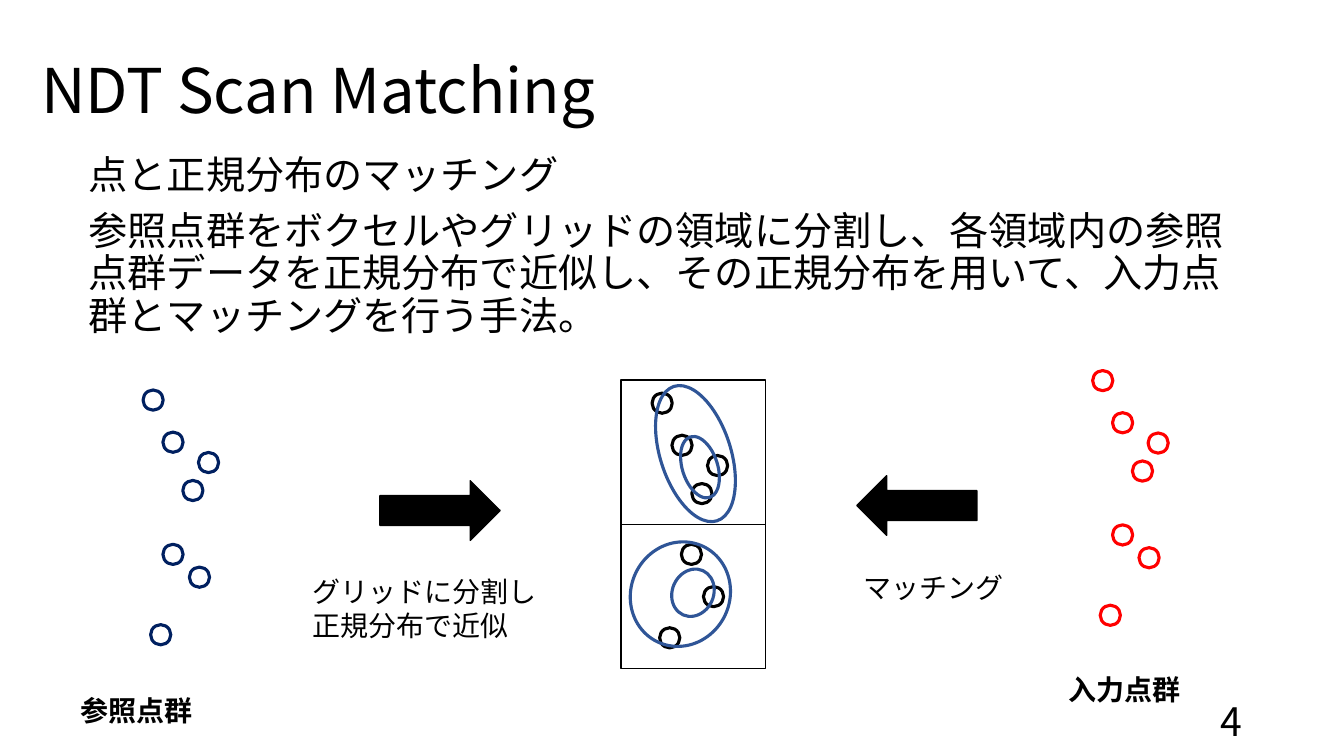
import pptx
import pptx.util
from lxml import etree
from pptx.dml.color import RGBColor
from pptx.enum.shapes import MSO_SHAPE
from pptx.enum.text import MSO_ANCHOR, MSO_AUTO_SIZE, PP_ALIGN
from pptx.oxml.ns import qn

Pt = pptx.util.Pt
FONT = "Noto Sans CJK JP"
COLORS = {"black": "000000", "navy": "002060", "blue": "2F5597", "red": "FF0000"}


def write_text(frame, text, size=20, bold=False, color="black", align=PP_ALIGN.LEFT,
               line_spacing=None, gap=0):
    """Write each line of text as one paragraph, with gap points between them."""
    for index, line in enumerate(text.split("\n")):
        paragraph = frame.add_paragraph() if index else frame.paragraphs[0]
        paragraph.alignment = align
        paragraph.space_before = Pt(gap if index else 0)
        if line_spacing:
            paragraph.line_spacing = line_spacing
        run = paragraph.add_run()
        run.text = line
        run.font.name = FONT
        run.font.size = Pt(size)
        run.font.bold = bold
        run.font.color.rgb = RGBColor.from_string(COLORS[color])
        east_asian = etree.SubElement(run.font._element, qn("a:ea"))
        east_asian.set("typeface", FONT)


class SlideBuilder:
    def __init__(self, slide):
        self.slide = slide

    def text(self, text, left, top, width, height, anchor=MSO_ANCHOR.TOP, grow=False, **style):
        box = self.slide.shapes.add_textbox(Pt(left), Pt(top), Pt(width), Pt(height))
        frame = box.text_frame
        frame.word_wrap = True
        frame.vertical_anchor = anchor
        frame.auto_size = MSO_AUTO_SIZE.SHAPE_TO_FIT_TEXT if grow else MSO_AUTO_SIZE.NONE
        write_text(frame, text, **style)

    def shape(self, kind, left, top, width, height, line="black", weight=1, fill=None, rotation=0):
        shape = self.slide.shapes.add_shape(kind, Pt(left), Pt(top), Pt(width), Pt(height))
        shape.shadow.inherit = False
        shape.rotation = rotation
        shape.line.color.rgb = RGBColor.from_string(COLORS[line])
        shape.line.width = Pt(weight)
        if fill:
            shape.fill.solid()
            shape.fill.fore_color.rgb = RGBColor.from_string(COLORS[fill])
        else:
            shape.fill.background()

    def ellipse(self, left, top, width, height, color, rotation=0):
        self.shape(MSO_SHAPE.OVAL, left, top, width, height, color, 2.25, rotation=rotation)

    def arrow(self, left, top, rotation=0):
        self.shape(MSO_SHAPE.RIGHT_ARROW, left, top, 85.8, 42.6, fill="black", rotation=rotation)

    def cloud(self, left, top, offsets, color):
        for x, y in offsets:
            self.ellipse(left + x, top + y, 14.4, 14.4, color)


def main():
    presentation = pptx.Presentation()
    presentation.slide_width, presentation.slide_height = Pt(960), Pt(540)
    builder = SlideBuilder(presentation.slides.add_slide(presentation.slide_layouts[6]))

    # Title and description
    builder.text("NDT Scan Matching", 22.3, 14.4, 828, 104.4, MSO_ANCHOR.MIDDLE,
                 size=44, line_spacing=0.9)
    builder.text("点と正規分布のマッチング\n"
                 "参照点群をボクセルやグリッドの領域に分割し、各領域内の参照点群データを"
                 "正規分布で近似し、その正規分布を用いて、入力点群とマッチングを行う手法。",
                 56.2, 107.3, 828, 145.4, size=28, line_spacing=0.9, gap=10)

    # Grid cells
    cell = 103.1
    for row in range(2):
        builder.shape(MSO_SHAPE.RECTANGLE, 443.5, 271.4 + row * cell, cell, cell)

    # Point clouds, as offsets from their top point
    shared = [(0, 0), (14.2, 30.1), (39.6, 44.6), (28.4, 64.6), (5.4, 167.6)]
    scan = shared + [(33.1, 126.5), (14.2, 110.2)]
    gridded = shared + [(36.7, 138.2), (20.9, 108)]
    builder.cloud(102.2, 278.6, scan, "navy")
    builder.cloud(465.8, 280.8, gridded, "black")
    builder.cloud(780.5, 264.7, scan, "red")

    # Normal distributions: outer and inner contour in each cell
    for left, top, width, height, rotation in [
        (471.6, 273.6, 50.4, 100.8, 342.2), (487.4, 311, 25.2, 45.4, 342.2),
        (450.7, 386.6, 70.6, 75.6, 26), (480.2, 406.1, 29.5, 34.6, 24),
    ]:
        builder.ellipse(left, top, width, height, "blue", rotation)

    # Arrows
    builder.arrow(271.4, 343.4)
    builder.arrow(612, 339.8, rotation=180)

    # Labels
    builder.text("参照点群", 50.4, 491.8, 111.6, 31.7, grow=True, bold=True)
    builder.text("入力点群", 756, 476.6, 111.6, 31.7, grow=True, bold=True)
    builder.text("グリッドに分割し\n正規分布で近似", 216, 406.8, 196.6, 55.4, grow=True)
    builder.text("マッチング", 609.8, 403.9, 115.2, 31.7, grow=True)

    # Slide number
    builder.text("4", 678.2, 500.4, 216, 28.8, MSO_ANCHOR.MIDDLE, size=28, align=PP_ALIGN.RIGHT)

    presentation.save("out.pptx")


if __name__ == "__main__":
    main()
